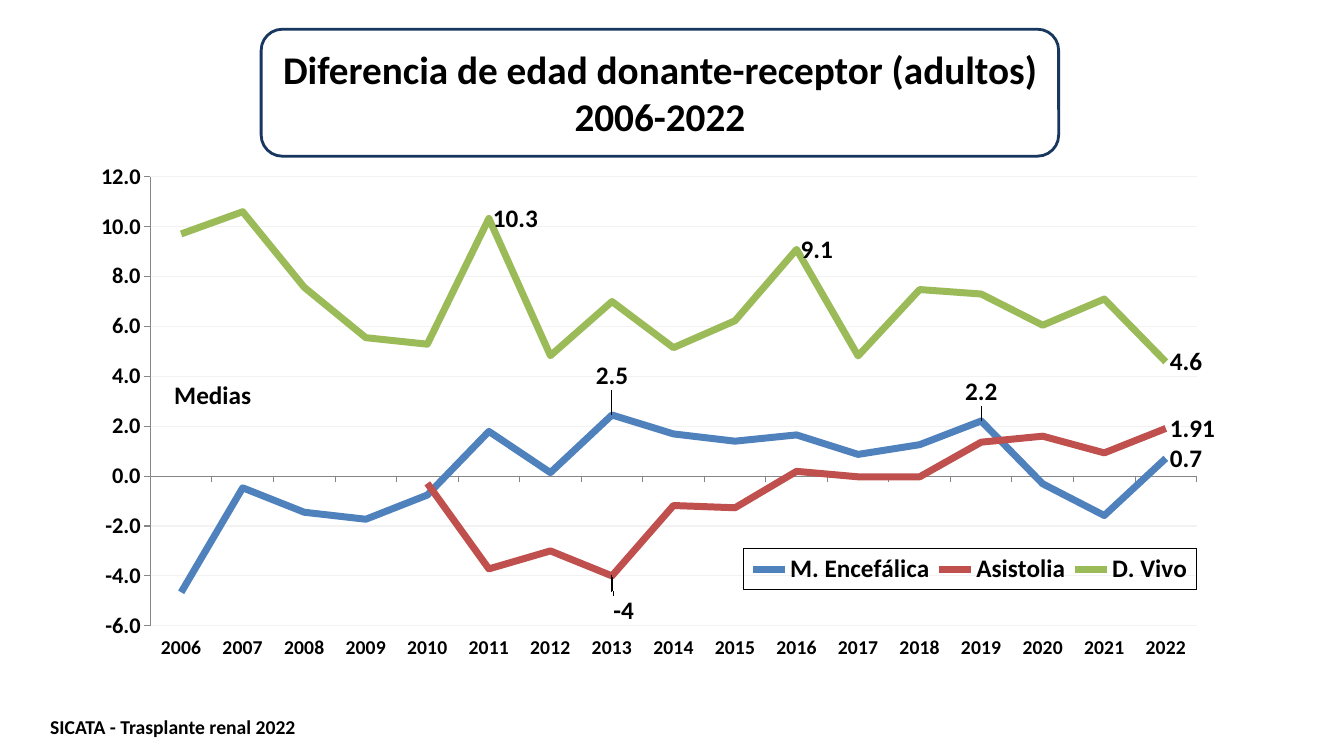
import dataclasses
import typing

import pptx
import pptx.chart.data
import pptx.dml.color
import pptx.enum.chart
import pptx.enum.shapes
import pptx.enum.text
import pptx.oxml
import pptx.oxml.ns
import pptx.util

Inches = pptx.util.Inches
Pt = pptx.util.Pt
qn = pptx.oxml.ns.qn
LabelPosition = pptx.enum.chart.XL_LABEL_POSITION
Align = pptx.enum.text.PP_ALIGN
Anchor = pptx.enum.text.MSO_ANCHOR


@dataclasses.dataclass(frozen=True)
class Theme:
    font: str = "Calibri"
    text: str = "000000"
    paper: str = "FFFFFF"
    frame: str = "17375E"
    grid: str = "F2F2F2"
    axis: str = "868686"
    title_size: int = 28
    body_size: int = 18
    value_size: int = 16
    small_size: int = 14


@dataclasses.dataclass(frozen=True)
class PointLabel:
    year: int
    position: typing.Any = LabelPosition.RIGHT
    shift: tuple[float, float] | None = None
    number_format: str = "0.0"


@dataclasses.dataclass(frozen=True)
class DonorType:
    name: str
    color: str
    differences: tuple[float | None, ...]
    labels: tuple[PointLabel, ...]


@dataclasses.dataclass(frozen=True)
class Leader:
    x: float
    top: float
    bottom: float


THEME = Theme()
YEARS = range(2006, 2023)
DONOR_TYPES = (
    DonorType(
        "M. Encefálica", "4F81BD",
        (-4.66, -0.47, -1.45, -1.73, -0.76, 1.79, 0.14, 2.45, 1.69, 1.4, 1.65,
         0.87, 1.26, 2.21, -0.31, -1.58, 0.71),
        (PointLabel(2013, LabelPosition.ABOVE, (0, -0.04)),
         PointLabel(2019, LabelPosition.ABOVE, (0, -0.02)),
         PointLabel(2022)),
    ),
    DonorType(
        "Asistolia", "C0504D",
        (None,) * 4 + (-0.29, -3.72, -3, -4, -1.18, -1.27, 0.19, -0.03, -0.03,
                       1.36, 1.6, 0.93, 1.91),
        (PointLabel(2013, LabelPosition.BELOW, (0.01, 0.03), "General"),
         PointLabel(2022, number_format="General")),
    ),
    DonorType(
        "D. Vivo", "9BBB59",
        (9.71, 10.6, 7.57, 5.55, 5.29, 10.33, 4.83, 7, 5.15, 6.23, 9.09, 4.82,
         7.48, 7.3, 6.05, 7.1, 4.58),
        (PointLabel(2011), PointLabel(2016), PointLabel(2022)),
    ),
)
LEADERS = (Leader(6.07, 3.9, 4.12), Leader(6.07, 5.72, 5.87))


def rgb(color: str) -> pptx.dml.color.RGBColor:
    return pptx.dml.color.RGBColor.from_string(color)


def style_font(font, size: int) -> None:
    font.name, font.size, font.bold = THEME.font, Pt(size), True
    font.color.rgb = rgb(THEME.text)


def style_line(line, color: str, width: float) -> None:
    line.color.rgb = rgb(color)
    line.width = Pt(width)


def write(shape, text: str, *, size: int, align=Align.LEFT, anchor=Anchor.TOP,
          wrap: bool = True) -> None:
    frame = shape.text_frame
    frame.word_wrap = wrap
    frame.vertical_anchor = anchor
    paragraph = frame.paragraphs[0]
    paragraph.text = text
    paragraph.alignment = align
    for run in paragraph.runs:
        style_font(run.font, size)


def chart_xml(body: str):
    """Parse one chart element written with the c and a prefixes."""
    names = pptx.oxml.ns.nsdecls("c", "a")
    return pptx.oxml.parse_xml(f"<c:wrap {names}>{body}</c:wrap>")[0]


def layout_xml(**settings: float | str):
    return chart_xml(
        "<c:layout><c:manualLayout>"
        + "".join(f'<c:{key} val="{value}"/>' for key, value in settings.items())
        + "</c:manualLayout></c:layout>"
    )


def label_points(series, donor: DonorType) -> None:
    series.data_labels.show_value = False
    all_labels = series.data_labels._element
    for label in donor.labels:
        index = label.year - YEARS.start
        data_label = series.points[index].data_label
        style_font(data_label.font, THEME.body_size)
        data_label.position = label.position
        idx = all_labels.xpath(f"c:dLbl/c:idx[@val='{index}']")[0]
        idx.addnext(chart_xml(
            f'<c:numFmt formatCode="{label.number_format}" sourceLinked="0"/>'))
        if label.shift:
            idx.addnext(layout_xml(x=label.shift[0], y=label.shift[1]))


def style_axes(chart) -> None:
    years, values = chart.category_axis, chart.value_axis
    for axis, size in ((years, THEME.small_size), (values, THEME.value_size)):
        style_font(axis.tick_labels.font, size)
        style_line(axis.format.line, THEME.axis, 0.75)
        axis.major_tick_mark = pptx.enum.chart.XL_TICK_MARK.OUTSIDE
        axis.minor_tick_mark = pptx.enum.chart.XL_TICK_MARK.NONE
    years.tick_label_position = pptx.enum.chart.XL_TICK_LABEL_POSITION.LOW
    values.minimum_scale, values.maximum_scale, values.major_unit = -6, 12, 2
    values.tick_labels.number_format = "#,##0.0"
    values.tick_labels.number_format_is_linked = False
    style_line(values.major_gridlines.format.line, THEME.grid, 0.75)


def style_legend(chart) -> None:
    chart.has_legend = True
    legend = chart.legend
    legend.position = pptx.enum.chart.XL_LEGEND_POSITION.RIGHT
    legend.include_in_layout = False
    style_font(legend.font, THEME.body_size)
    element = legend._element
    for old in element.findall(qn("c:layout")):
        element.remove(old)
    element.find(qn("c:legendPos")).addnext(layout_xml(
        xMode="edge", yMode="edge", x=0.57, y=0.76, w=0.39, h=0.08))
    element.find(qn("c:txPr")).addprevious(chart_xml(
        '<c:spPr><a:ln w="9525"><a:solidFill>'
        f'<a:srgbClr val="{THEME.text}"/></a:solidFill></a:ln></c:spPr>'))


def add_age_chart(slide) -> None:
    data = pptx.chart.data.CategoryChartData()
    data.categories = [str(year) for year in YEARS]
    for donor in DONOR_TYPES:
        data.add_series(donor.name, donor.differences)
    chart = slide.shapes.add_chart(
        pptx.enum.chart.XL_CHART_TYPE.LINE, Inches(0.8), Inches(1.55),
        Inches(11.53), Inches(5.12), data).chart
    chart.has_title = False
    style_font(chart.font, THEME.body_size)
    chart.plots[0].vary_by_categories = False
    for series, donor in zip(chart.plots[0].series, DONOR_TYPES):
        series.smooth = False
        style_line(series.format.line, donor.color, 5)
        series.marker.style = pptx.enum.chart.XL_MARKER_STYLE.NONE
        label_points(series, donor)
    style_axes(chart)
    style_legend(chart)
    plot_area = chart._chartSpace.chart.plotArea
    for old in plot_area.findall(qn("c:layout")):
        plot_area.remove(old)
    plot_area.insert(0, layout_xml(
        layoutTarget="inner", xMode="edge", yMode="edge",
        x=0.06, y=0.04, w=0.9, h=0.87))


def add_leader(slide, leader: Leader) -> None:
    line = slide.shapes.add_connector(
        pptx.enum.shapes.MSO_CONNECTOR.STRAIGHT, Inches(leader.x),
        Inches(leader.top), Inches(leader.x), Inches(leader.bottom))
    style_line(line.line, THEME.text, 0.75)
    line._element.spPr.append(pptx.oxml.parse_xml(
        f'<a:effectLst {pptx.oxml.ns.nsdecls("a")}/>'))


def main() -> None:
    deck = pptx.Presentation()
    deck.slide_width, deck.slide_height = Inches(13.33), Inches(7.5)
    slide = deck.slides.add_slide(deck.slide_layouts.get_by_name("Title Only"))
    title = slide.shapes.title
    title.left, title.top = Inches(2.59), Inches(0.44)
    title.width, title.height = Inches(7.91), Inches(0.95)
    title.fill.solid()
    title.fill.fore_color.rgb = rgb(THEME.paper)
    write(title, "Diferencia de edad donante-receptor (adultos)\v2006-2022",
          size=THEME.title_size, align=Align.CENTER, anchor=Anchor.MIDDLE)
    add_age_chart(slide)
    for leader in LEADERS:
        add_leader(slide, leader)
    source = slide.shapes.add_textbox(
        Inches(0.4), Inches(7.04), Inches(2.76), Inches(0.33))
    write(source, "SICATA - Trasplante renal 2022", size=THEME.small_size)
    title_frame = slide.shapes.add_shape(
        pptx.enum.shapes.MSO_SHAPE.ROUNDED_RECTANGLE,
        Inches(2.59), Inches(0.29), Inches(7.91), Inches(1.26))
    title_frame.shadow.inherit = False
    title_frame.fill.background()
    style_line(title_frame.line, THEME.frame, 2)
    measure = slide.shapes.add_textbox(
        Inches(1.63), Inches(3.71), Inches(0.97), Inches(0.4))
    write(measure, "Medias", size=THEME.body_size, wrap=False)
    deck.save("out.pptx")


if __name__ == "__main__":
    main()
